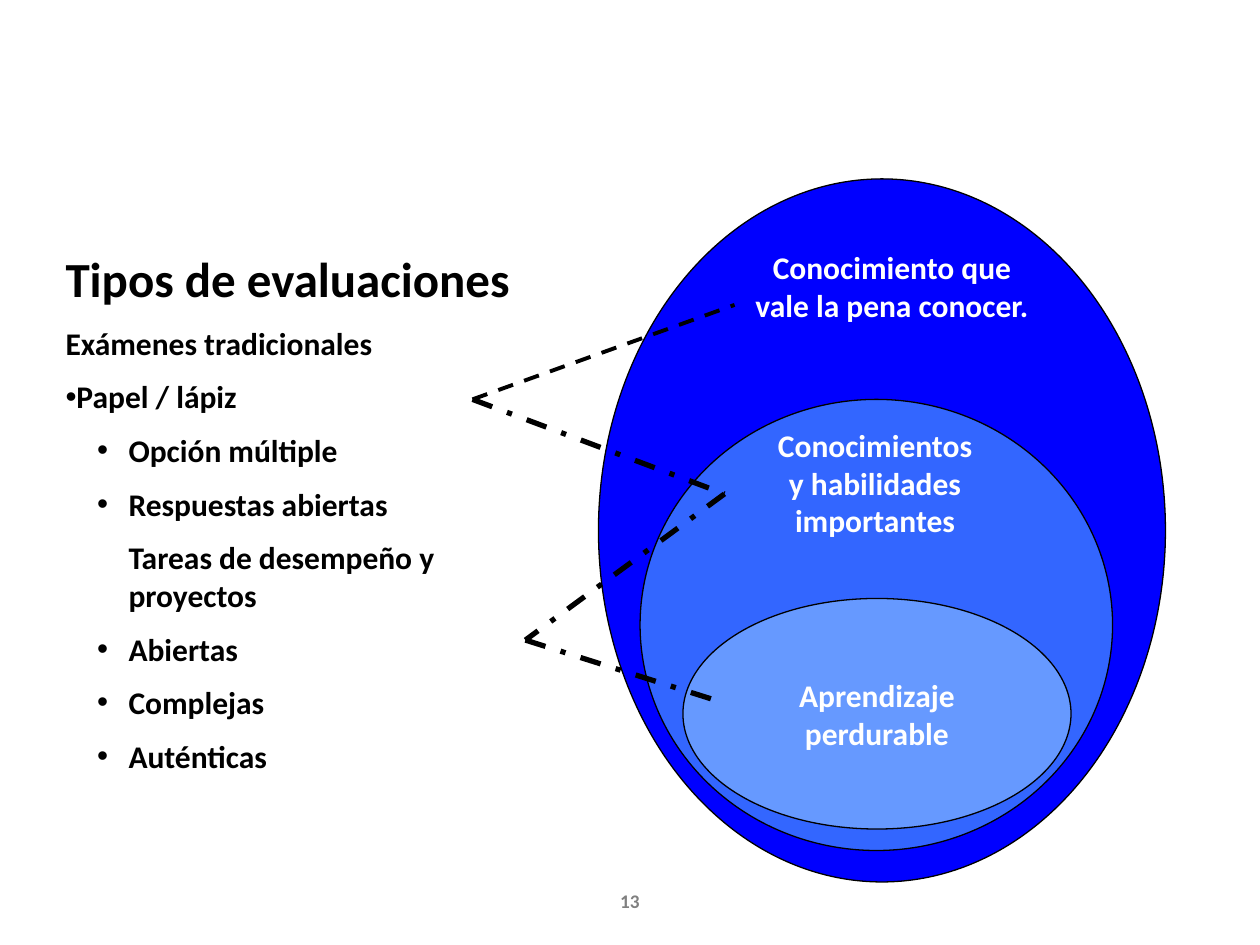
from dataclasses import dataclass

from lxml import etree
from pptx import Presentation
from pptx.dml.color import RGBColor
from pptx.enum.dml import MSO_LINE
from pptx.enum.shapes import MSO_CONNECTOR, MSO_SHAPE
from pptx.enum.text import MSO_ANCHOR, MSO_AUTO_SIZE, PP_ALIGN
from pptx.oxml.ns import qn
from pptx.util import Inches, Pt

LEFT, CENTER = PP_ALIGN.LEFT, PP_ALIGN.CENTER
TOP, MIDDLE = MSO_ANCHOR.TOP, MSO_ANCHOR.MIDDLE
FIXED_SIZE = MSO_AUTO_SIZE.NONE
OVAL = MSO_SHAPE.OVAL
STRAIGHT = MSO_CONNECTOR.STRAIGHT
DASH, DASH_DOT = MSO_LINE.DASH, MSO_LINE.DASH_DOT
TITLE_AND_CONTENT = 1


@dataclass(frozen=True)
class Theme:
    font: str = "Calibri"
    ink: str = "000000"
    light: str = "FFFFFF"
    muted: str = "808080"
    outer: str = "0000FF"
    middle: str = "3366FF"
    inner: str = "6699FF"
    title_size: float = 28
    text_size: float = 18
    number_size: float = 11
    list_gap: float = 9
    outline: float = 0.75


class PageBuilder:
    def __init__(self, page, theme):
        self.page = page
        self.theme = theme

    def place(self, shape, box):
        shape.left, shape.top, shape.width, shape.height = map(Inches, box)

    def set_text(self, shape, lines, color, size, align=CENTER, anchor=TOP, wrap=True):
        frame = shape.text_frame
        frame.text = "\n".join(lines)
        frame.word_wrap = wrap
        frame.auto_size = FIXED_SIZE
        frame.vertical_anchor = anchor
        for para in frame.paragraphs:
            para.alignment = align
            for span in para.runs:
                span.font.name = self.theme.font
                span.font.size = Pt(size)
                span.font.bold = True
                span.font.color.rgb = RGBColor.from_string(color)

    def title(self, text, box):
        shape = self.page.shapes.title
        self.place(shape, box)
        self.set_text(shape, [text], self.theme.ink, self.theme.title_size, LEFT)

    def outline_list(self, items, box):
        """Fill the body with (text, level, has_bullet) items."""
        shape = self.page.placeholders[1]
        self.place(shape, box)
        self.set_text(shape, [text for text, _, _ in items],
                      self.theme.ink, self.theme.text_size, LEFT)
        for index, (para, item) in enumerate(zip(shape.text_frame.paragraphs, items)):
            _, level, has_bullet = item
            para.level = level
            para.space_before = Pt(self.theme.list_gap if index else 0)
            self.bullet(para, level, has_bullet)

    def bullet(self, para, level, has_bullet):
        hanging = 0.25 if level and has_bullet else 0
        properties = para._p.get_or_add_pPr()
        properties.set("marL", str(Inches(0.5 * level)))
        properties.set("indent", str(-Inches(hanging)))
        if has_bullet:
            font = etree.SubElement(properties, qn("a:buFont"))
            font.set("typeface", "Arial")
            etree.SubElement(properties, qn("a:buChar")).set("char", "•")
        else:
            etree.SubElement(properties, qn("a:buNone"))

    def ellipse(self, box, fill):
        shape = self.page.shapes.add_shape(OVAL, *map(Inches, box))
        shape.shadow.inherit = False
        shape.fill.solid()
        shape.fill.fore_color.rgb = RGBColor.from_string(fill)
        shape.line.color.rgb = RGBColor.from_string(self.theme.ink)
        shape.line.width = Pt(self.theme.outline)
        return shape

    def label(self, lines, box, color, size, **layout):
        shape = self.page.shapes.add_textbox(*map(Inches, box))
        self.set_text(shape, lines, color, size, **layout)

    def line(self, start, end, width, dash):
        connector = self.page.shapes.add_connector(
            STRAIGHT, *map(Inches, start + end))
        connector.line.color.rgb = RGBColor.from_string(self.theme.ink)
        connector.line.width = Pt(width)
        connector.line.dash_style = dash
        etree.SubElement(connector._element.spPr, qn("a:effectLst"))


def main():
    deck = Presentation()
    deck.slide_width, deck.slide_height = Inches(10), Inches(7.5)
    page = deck.slides.add_slide(deck.slide_layouts[TITLE_AND_CONTENT])
    theme = Theme()
    builder = PageBuilder(page, theme)

    builder.title("Tipos de evaluaciones", (0.42, 1.92, 3.75, 0.6))
    builder.outline_list([
        ("Exámenes tradicionales", 0, False),
        ("Papel / lápiz", 0, True),
        ("Opción múltiple", 1, True),
        ("Respuestas abiertas", 1, True),
        ("Tareas de desempeño y proyectos", 1, False),
        ("Abiertas", 1, True),
        ("Complejas", 1, True),
        ("Auténticas", 1, True),
    ], (0.42, 2.52, 3.75, 3.61))

    builder.ellipse((4.75, 1.42, 4.5, 5.58), theme.outer)
    builder.label(["Conocimiento que vale la pena conocer."],
                  (5.83, 1.92, 2.5, 1.3), theme.light, theme.text_size)
    builder.ellipse((5.08, 3.17, 3.75, 3.58), theme.middle)
    builder.label(["Conocimientos", "y habilidades", "importantes"],
                  (6, 3.33, 1.89, 1.3), theme.light, theme.text_size, wrap=False)
    core = builder.ellipse((5.42, 4.75, 3.08, 1.83), theme.inner)
    builder.set_text(core, ["Aprendizaje", "perdurable"], theme.light,
                     theme.text_size, anchor=MIDDLE, wrap=False)

    exams, tasks = (3.75, 3.17), (4.17, 5.08)
    worth_knowing, important, enduring = (5.83, 2.42), (5.75, 3.92), (5.75, 5.58)
    builder.line(exams, worth_knowing, 2.25, DASH)
    for start, end in ((exams, important), (important, tasks), (tasks, enduring)):
        builder.line(start, end, 3, DASH_DOT)

    builder.label(["13"], (4.71, 6.95, 0.58, 0.4), theme.muted,
                  theme.number_size, anchor=MIDDLE)
    deck.save("out.pptx")


if __name__ == "__main__":
    main()
